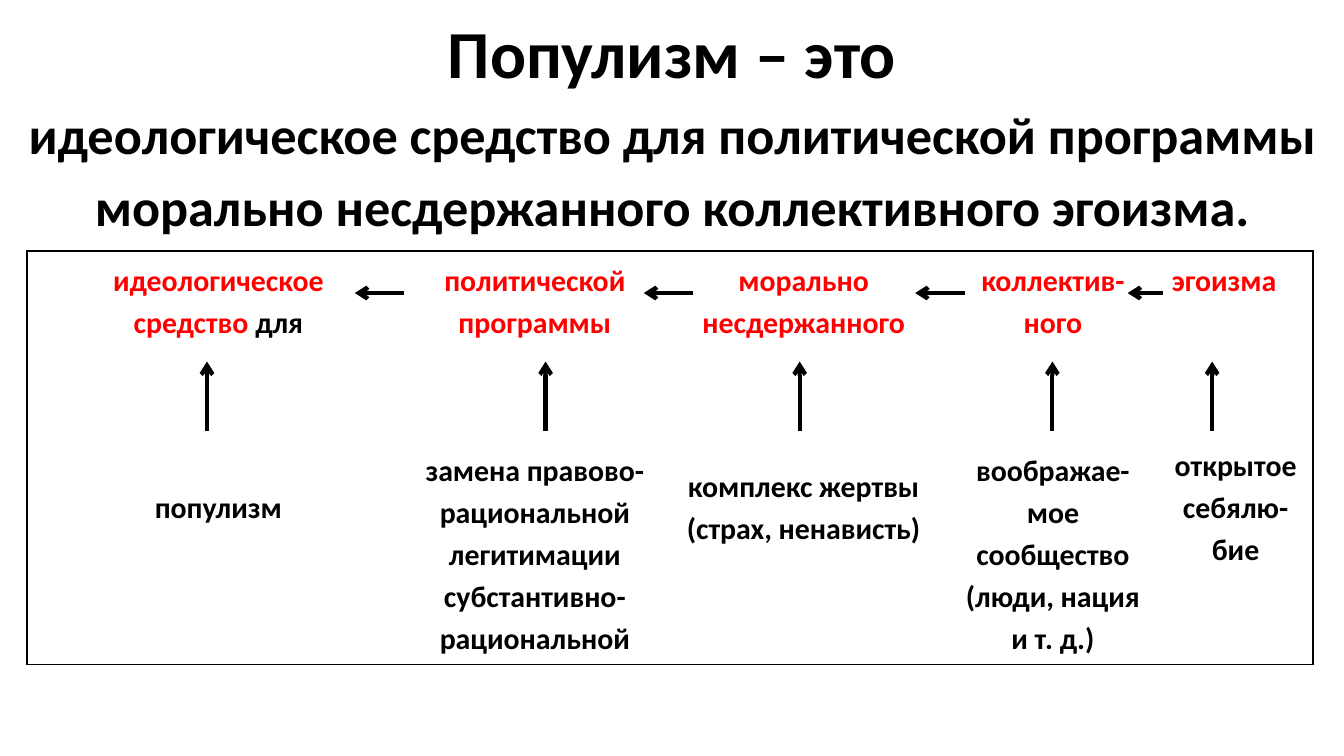
from pptx import Presentation
from pptx.dml.color import RGBColor
from pptx.enum import shapes, text
from pptx.oxml import ns, xmlchemy
from pptx.util import Pt
from lxml import etree

BLACK = RGBColor(0, 0, 0)
RED = RGBColor(255, 0, 0)
MIDDLE, BOTTOM, TOP = text.MSO_ANCHOR.MIDDLE, text.MSO_ANCHOR.BOTTOM, text.MSO_ANCHOR.TOP
CENTER, LEFT = text.PP_ALIGN.CENTER, text.PP_ALIGN.LEFT

TITLE = [
    ("Популизм ‒ это", 36),
    ("идеологическое средство для политической программы "
     "мoрально несдержанного коллективного эгоизма.", 28),
]
TERMS = [
    [[("идеологическое", RED)], [("средство ", RED), ("для", BLACK)]],
    [[("политической программы", RED)]],
    [[("мoрально несдержанного", RED)]],
    [[("коллектив-ного", RED)]],
    [[("эгоизма", RED)]],
]
MEANINGS = [
    (["пoпулизм"], MIDDLE),
    (["замена правово-рациональной легитимации субстантивно-рациональной"], BOTTOM),
    (["комплекс жертвы (страх, ненависть)"], MIDDLE),
    (["воображае-мое coобщество", "(люди, нация и т. д.)"], BOTTOM),
    (["открытое себялю-бие"], MIDDLE),
]
COLUMN_WIDTHS = [205.2, 133.9, 154.1, 113, 82.8]
ROW_HEIGHTS = [47.5, 170]
TABLE_LEFT, TABLE_TOP = 14.4, 134.6
UP_ARROWS = [110.9, 292.3, 428.4, 563.8, 649.4]
UP_FROM, UP_TO = 231, 193.7
LEFT_ARROWS = [(216.7, 190.1), (371.5, 344.9), (517, 490.3), (622.8, 604.1)]
LEFT_Y = 157


def write(para, words, size=16, color=BLACK, align=CENTER):
    para.alignment = align
    para.line_spacing = 1.15
    span = para.add_run()
    span.text = words
    span.font.name = "Calibri"
    span.font.size = Pt(size)
    span.font.bold = True
    span.font.color.rgb = color


def next_para(frame, index):
    return frame.add_paragraph() if index else frame.paragraphs[0]


def set_border(cell, side, visible):
    props = cell._tc.get_or_add_tcPr()
    line = etree.SubElement(props, ns.qn(f"a:ln{side}"), w=str(Pt(1)))
    if visible:
        fill = etree.SubElement(line, ns.qn("a:solidFill"))
        etree.SubElement(fill, ns.qn("a:srgbClr"), val=str(BLACK))
    else:
        etree.SubElement(line, ns.qn("a:noFill"))


def add_arrow(page, x1, y1, x2, y2):
    arrow = page.shapes.add_connector(
        shapes.MSO_CONNECTOR.STRAIGHT, Pt(x1), Pt(y1), Pt(x2), Pt(y2))
    arrow.line.color.rgb = BLACK
    arrow.line.width = Pt(2.25)
    etree.SubElement(arrow.line._get_or_add_ln(), ns.qn("a:tailEnd"), type="arrow")
    etree.SubElement(arrow._element.spPr, ns.qn("a:effectLst"))


def add_title(page):
    box = page.shapes.add_textbox(Pt(0), Pt(26.6), Pt(720), Pt(113))
    frame = box.text_frame
    frame.word_wrap = True
    frame.vertical_anchor = MIDDLE
    frame.margin_bottom = Pt(43)
    for index, (words, size) in enumerate(TITLE):
        write(next_para(frame, index), words, size=size)


def add_terms(page):
    last_row, last_col = len(ROW_HEIGHTS) - 1, len(COLUMN_WIDTHS) - 1
    table = page.shapes.add_table(
        last_row + 1, last_col + 1, Pt(TABLE_LEFT), Pt(TABLE_TOP),
        Pt(sum(COLUMN_WIDTHS)), Pt(sum(ROW_HEIGHTS))).table
    table.first_row = table.horz_banding = False
    for column, width in zip(table.columns, COLUMN_WIDTHS):
        column.width = Pt(width)
    for row, height in zip(table.rows, ROW_HEIGHTS):
        row.height = Pt(height)

    meanings = [([[(line, BLACK)] for line in lines], anchor) for lines, anchor in MEANINGS]
    rows = [[(term, TOP) for term in TERMS], meanings]
    for r, row in enumerate(rows):
        for c, (paras, anchor) in enumerate(row):
            cell = table.cell(r, c)
            cell.vertical_anchor = anchor
            edges = {"L": c == 0, "R": c == last_col, "T": r == 0, "B": r == last_row}
            for side, visible in edges.items():
                set_border(cell, side, visible)
            cell.fill.background()
            align = LEFT if (r, c) == (0, last_col) else CENTER
            for index, spans in enumerate(paras):
                para = next_para(cell.text_frame, index)
                for words, color in spans:
                    write(para, words, color=color, align=align)


def main():
    deck = Presentation()
    deck.slide_width, deck.slide_height = Pt(720), Pt(405)
    page = deck.slides.add_slide(deck.slide_layouts[6])
    add_title(page)
    add_terms(page)
    for x in UP_ARROWS:
        add_arrow(page, x, UP_FROM, x, UP_TO)
    for start, end in LEFT_ARROWS:
        add_arrow(page, start, LEFT_Y, end, LEFT_Y)
    deck.save("out.pptx")


if __name__ == "__main__":
    main()
